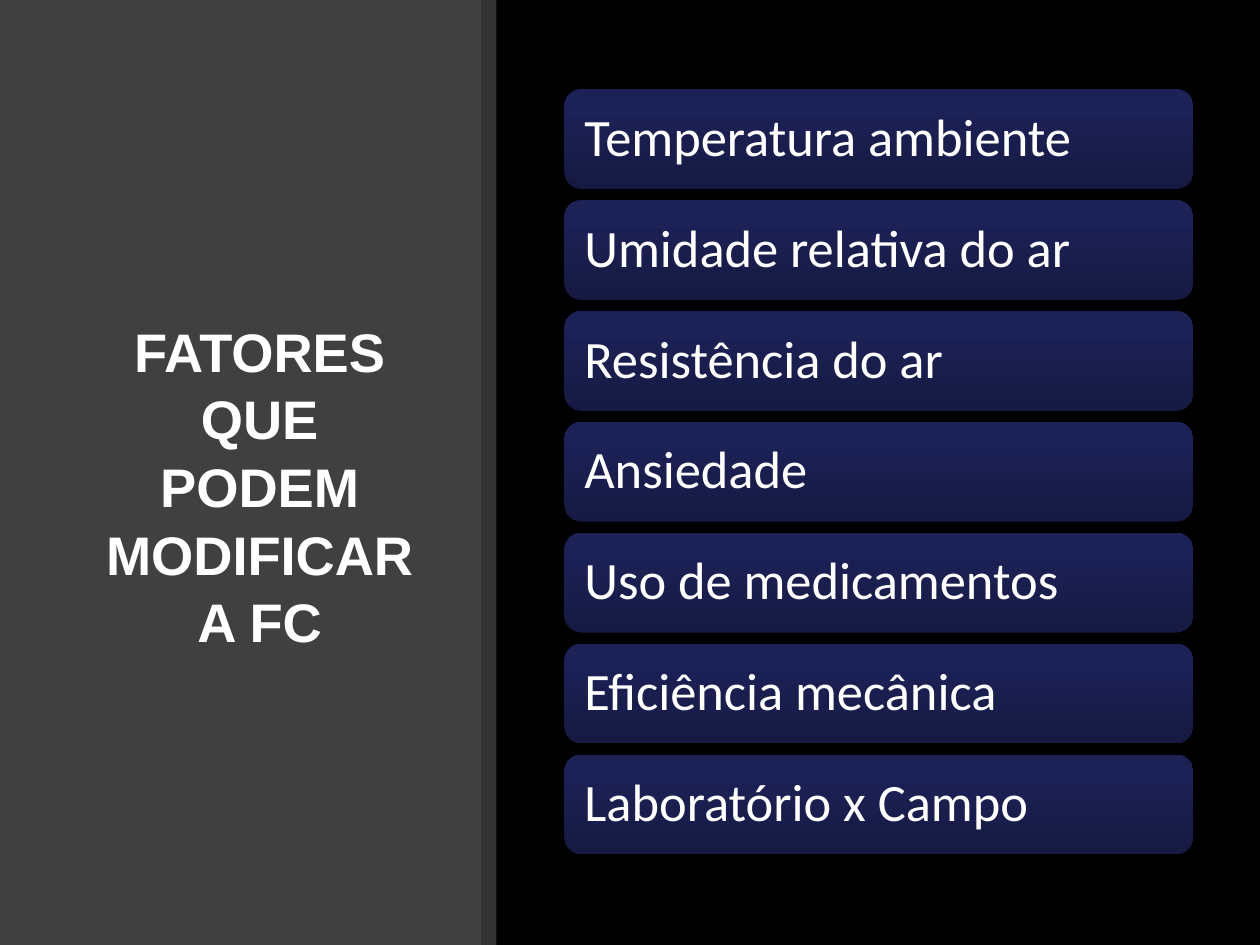
"""Build a slide with a title panel and a column of seven factor bars."""
from copy import deepcopy

from lxml import etree
from pptx import Presentation
from pptx.dml.color import RGBColor
from pptx.enum.shapes import MSO_SHAPE
from pptx.enum.text import MSO_ANCHOR, PP_ALIGN
from pptx.oxml.ns import qn
from pptx.util import Inches, Pt

RECT, ROUND = MSO_SHAPE.RECTANGLE, MSO_SHAPE.ROUNDED_RECTANGLE
MIDDLE = MSO_ANCHOR.MIDDLE
LEFT, CENTER = PP_ALIGN.LEFT, PP_ALIGN.CENTER
BLACK = RGBColor(0x00, 0x00, 0x00)
WHITE = RGBColor(0xFF, 0xFF, 0xFF)
GRAY = RGBColor(0x40, 0x40, 0x40)
STOPS = [
    (0, RGBColor(0x16, 0x1A, 0x42)),
    (0.8, RGBColor(0x1C, 0x21, 0x56)),
    (1, RGBColor(0x1B, 0x20, 0x58)),
]
FACTORS = [
    "Temperatura ambiente",
    "Umidade relativa do ar",
    "Resistência do ar",
    "Ansiedade",
    "Uso de medicamentos",
    "Eficiência mecânica",
    "Laboratório x Campo",
]
WIDE, HIGH = Inches(10), Inches(7.5)
PANEL, STRIP = Inches(3.82), Inches(0.12)
TOP, ROW, BAR = Inches(0.71), Inches(0.88), Inches(0.79)


def add_box(home, kind, *place):
    box = home.shapes.add_shape(kind, *place)
    box.shadow.inherit = False
    box.line.fill.background()
    return box


def set_text(shape, text, align, space, style):
    frame = shape.text_frame
    frame.word_wrap = True
    frame.vertical_anchor = MIDDLE
    frame.text = text
    para = frame.paragraphs[0]
    para.alignment = align
    para.line_spacing = space
    font = para.runs[0].font
    font.color.rgb = WHITE
    for name, value in style.items():
        setattr(font, name, value)


deck = Presentation()
deck.slide_width, deck.slide_height = WIDE, HIGH
slide = deck.slides.add_slide(deck.slide_layouts[5])
slide.background.fill.solid()
slide.background.fill.fore_color.rgb = BLACK

panel = add_box(slide, RECT, 0, 0, PANEL, HIGH)
panel.fill.solid()
panel.fill.fore_color.rgb = GRAY

title = slide.shapes.title
place = {"left": 0.69, "top": 0.89, "width": 2.74, "height": 5.91}
for name, value in place.items():
    setattr(title, name, Inches(value))
set_text(title, "FATORES QUE PODEM MODIFICAR A FC", CENTER, 1.04,
         {"name": "Arial", "size": Pt(31), "bold": True})
panel._element.addnext(title._element)

strip = add_box(slide, RECT, PANEL, 0, STRIP, HIGH)
strip.fill.solid()
strip.fill.fore_color.rgb = WHITE
color = strip._element.spPr.find(".//" + qn("a:srgbClr"))
etree.SubElement(color, qn("a:alpha"), val="20000")

group = slide.shapes.add_group_shape()
for row, factor in enumerate(FACTORS):
    bar = add_box(group, ROUND, Inches(4.48), TOP + row * ROW, Inches(4.99), BAR)
    bar.fill.gradient()
    bar.fill.gradient_angle = 90
    first = bar._element.spPr.find(".//" + qn("a:gs"))
    first.addnext(deepcopy(first))
    for stop, (spot, shade) in zip(bar.fill.gradient_stops, STOPS):
        stop.position = spot
        stop.color.rgb = shade
    for side in ("left", "right", "top", "bottom"):
        setattr(bar.text_frame, "margin_" + side, Inches(0.12))
    set_text(bar, factor, LEFT, 0.9, {"name": "Calibri", "size": Pt(30)})

deck.save("out.pptx")
